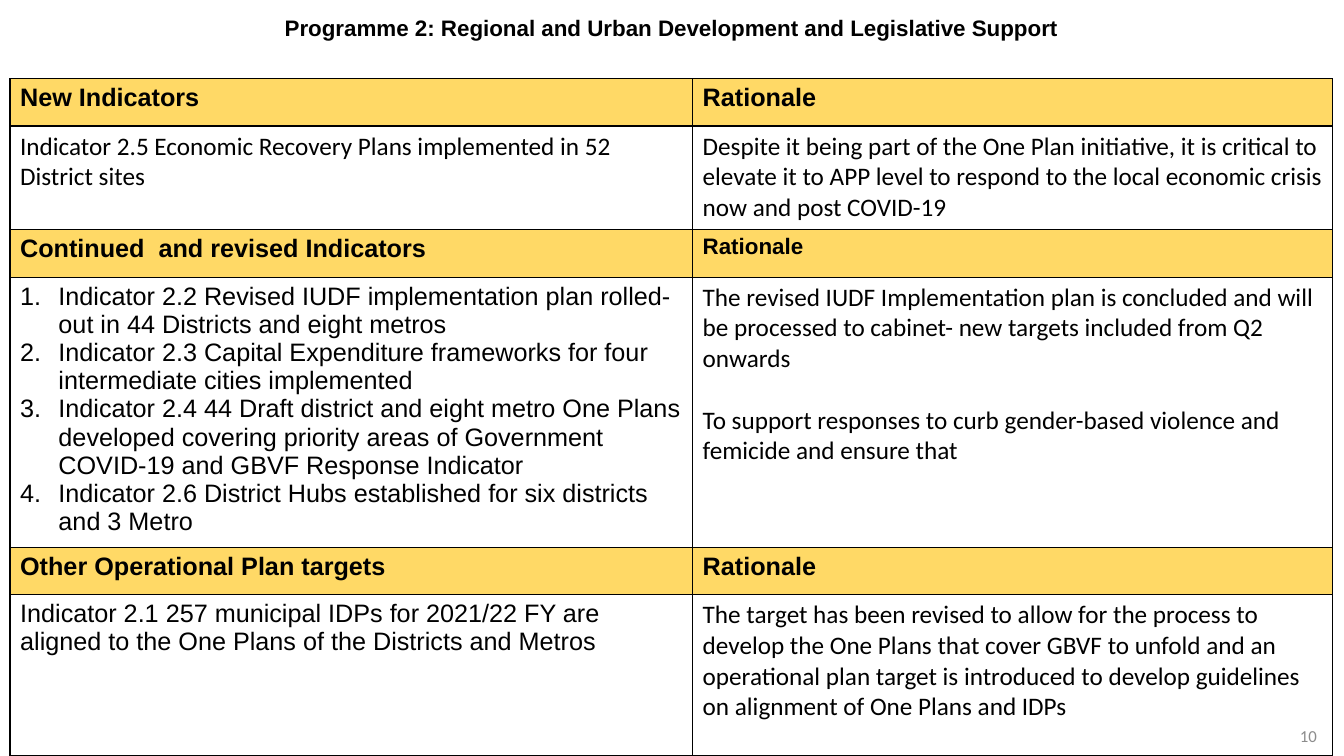
from lxml.etree import SubElement
from pptx import Presentation
from pptx.dml.color import RGBColor
from pptx.enum.text import MSO_ANCHOR as Anchor, PP_ALIGN as Align
from pptx.oxml.ns import qn
from pptx.util import Pt

PX = 9144  # 100 px to the inch
COLORS = {"text": "000000", "band": "FFD966", "border": "000000", "number": "8C8C8C"}


def write(frame, text, font="Calibri", size=18, bold=False, color="text",
          align=Align.LEFT, spacing=None, gap=0, numbered=False):
    """Fill a text frame, one paragraph per line of text."""
    frame.word_wrap = True
    lines = text.split("\n")
    for index, line in enumerate(lines):
        para = frame.paragraphs[0] if index == 0 else frame.add_paragraph()
        para.alignment = align
        if spacing:
            para.line_spacing = spacing
        if gap and index < len(lines) - 1:
            para.space_after = Pt(gap)
        if numbered:
            props = para._p.get_or_add_pPr()
            props.set("marL", str(38 * PX))
            props.set("indent", str(-38 * PX))
            SubElement(props, qn("a:buFont"), typeface="+mj-lt")
            SubElement(props, qn("a:buAutoNum"), type="arabicPeriod")
        span = para.add_run()
        span.text = line
        span.font.name = font
        span.font.size = Pt(size)
        span.font.bold = bold
        span.font.color.rgb = RGBColor.from_string(COLORS[color])


deck = Presentation()
deck.slide_width, deck.slide_height = 1333 * PX, 750 * PX
page = deck.slides.add_slide(deck.slide_layouts[6])

# Indicator table: each row is a pair of (text, format)
heading = dict(font="Arial", bold=True)
small_heading = dict(heading, size=16)
arial = dict(font="Arial")
calibri = dict(font="Calibri")
rows = [
    (47, ("New Indicators", heading), ("Rationale", heading)),
    (103,
     ("Indicator 2.5 Economic Recovery Plans implemented in 52 District sites", calibri),
     ("Despite it being part of the One Plan initiative, it is critical to elevate it to "
      "APP level to respond to the local economic crisis now and post COVID-19", calibri)),
    (47, ("Continued  and revised Indicators", heading), ("Rationale", small_heading)),
    (268,
     ("Indicator 2.2 Revised IUDF implementation plan rolled-out in 44 Districts and eight metros\n"
      "Indicator 2.3 Capital Expenditure frameworks for four intermediate cities implemented\n"
      "Indicator 2.4 44 Draft district and eight metro One Plans developed covering priority "
      "areas of Government COVID-19 and GBVF Response Indicator\n"
      "Indicator 2.6 District Hubs established for six districts and 3 Metro",
      dict(arial, numbered=True)),
     ("The revised IUDF Implementation plan is concluded and will be processed to cabinet- "
      "new targets included from Q2 onwards\n"
      "To support responses to curb gender-based violence and femicide and ensure that",
      dict(calibri, gap=22))),
    (47, ("Other Operational Plan targets", heading), ("Rationale", heading)),
    (160,
     ("Indicator 2.1 257 municipal IDPs for 2021/22 FY are aligned to the One Plans of the "
      "Districts and Metros", arial),
     ("The target has been revised to allow for the process to develop the One Plans that "
      "cover GBVF to unfold and an operational plan target is introduced to develop "
      "guidelines on alignment of One Plans and IDPs", calibri)),
]
widths = [677, 635]
height = sum(row[0] for row in rows)
table = page.shapes.add_table(len(rows), len(widths), 10 * PX, 78 * PX,
                              sum(widths) * PX, height * PX).table
table.first_row = table.horz_banding = False
for column, width in zip(table.columns, widths):
    column.width = width * PX

for row_index, (row_height, *entries) in enumerate(rows):
    table.rows[row_index].height = row_height * PX
    for column_index, (text, style) in enumerate(entries):
        cell = table.cell(row_index, column_index)
        write(cell.text_frame, text, **style)
        # Borders, then fill
        for side in ("lnL", "lnR", "lnT", "lnB"):
            line = SubElement(cell._tc.get_or_add_tcPr(), qn(f"a:{side}"), w=str(Pt(1)))
            SubElement(SubElement(line, qn("a:solidFill")), qn("a:srgbClr"),
                       val=COLORS["border"])
        if row_index % 2 == 0:
            cell.fill.solid()
            cell.fill.fore_color.rgb = RGBColor.from_string(COLORS["band"])
        else:
            cell.fill.background()

# Page number and title
labels = [
    ("10", (1016, 710, 300, 40), dict(size=12, color="number", align=Align.RIGHT)),
    ("Programme 2: Regional and Urban Development and Legislative Support",
     (235, 0, 862, 59), dict(small_heading, align=Align.CENTER, spacing=0.9)),
]
for text, place, style in labels:
    box = page.shapes.add_textbox(*(length * PX for length in place))
    box.text_frame.vertical_anchor = Anchor.MIDDLE
    write(box.text_frame, text, **style)

deck.save("out.pptx")
